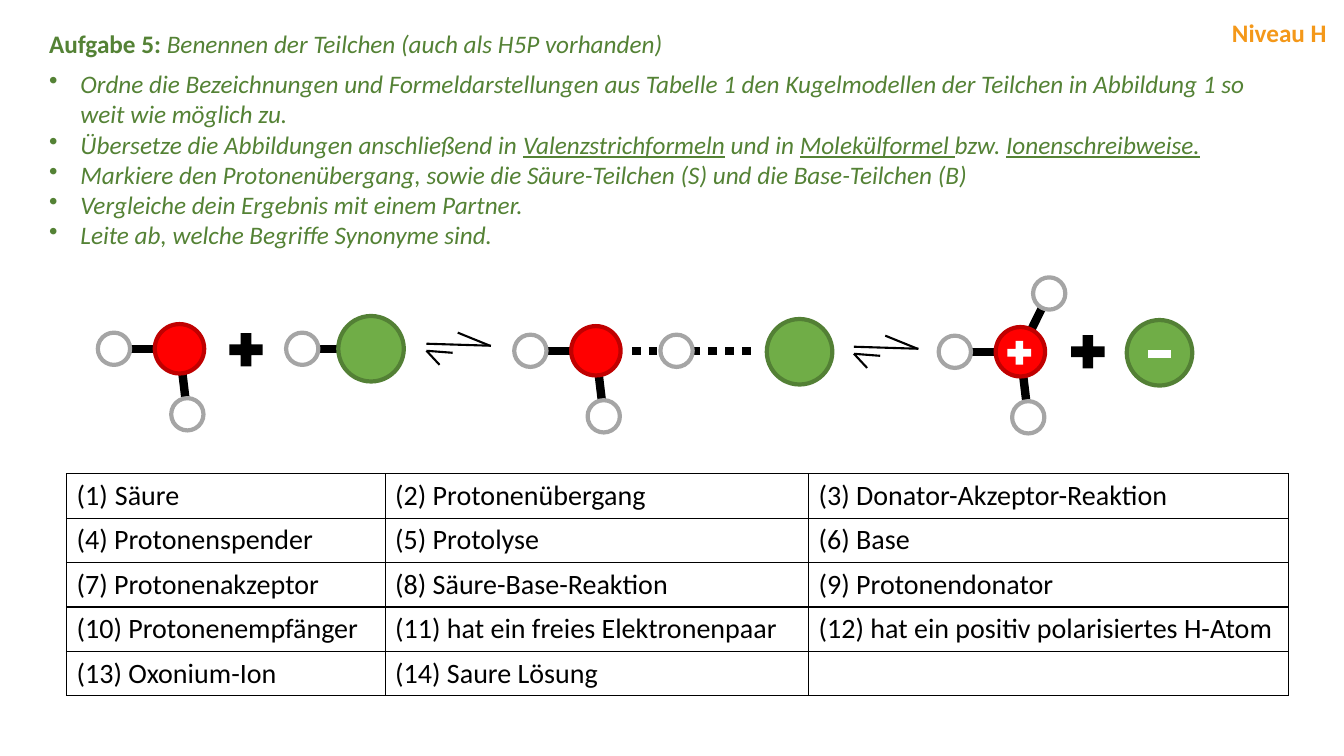
from dataclasses import dataclass
from lxml.etree import SubElement
from pptx import Presentation
from pptx.dml.color import RGBColor
from pptx.enum.dml import MSO_LINE_DASH_STYLE as Dash
from pptx.enum.shapes import MSO_CONNECTOR as Connector, MSO_SHAPE as Shape
from pptx.oxml.ns import qn
from pptx.util import Emu, Inches, Pt


@dataclass(frozen=True)
class Theme:
    font: str = "Calibri"
    body: int = 18
    cell: int = 20
    green: str = "548235"
    orange: str = "F49819"
    black: str = "000000"
    white: str = "FFFFFF"
    bond: float = 6
    outline: float = 3
    arrow: float = 1.5
    border: float = 1


T = Theme()
LEVEL = "Niveau H"
TITLE = [("Aufgabe 5: ", "b"), ("Benennen der Teilchen (auch als H5P vorhanden)", "i")]
TASKS = [
    [("Ordne die Bezeichnungen und Formeldarstellungen aus Tabelle 1 den Kugelmodellen "
      "der Teilchen in Abbildung 1 so weit wie möglich zu.", "i")],
    [("Übersetze die Abbildungen anschließend in ", "i"), ("Valenzstrichformeln", "iu"),
     (" und in ", "i"), ("Molekülformel ", "iu"), ("bzw. ", "i"), ("Ionenschreibweise.", "iu")],
    [("Markiere den Protonenübergang, sowie die Säure-Teilchen (S) und die Base-Teilchen (B)", "i")],
    [("Vergleiche dein Ergebnis mit einem Partner.", "i")],
    [("Leite ab, welche Begriffe Synonyme sind.", "i")],
]
TERMS = [
    ["Säure", "(2) Protonenübergang", "(3) Donator-Akzeptor-Reaktion"],
    ["(4) Protonenspender", "(5) Protolyse", "(6) Base"],
    ["(7) Protonenakzeptor", "(8) Säure-Base-Reaktion", "(9) Protonendonator"],
    ["(10) Protonenempfänger", "(11) hat ein freies Elektronenpaar",
     "(12) hat ein positiv polarisiertes H-Atom"],
    ["(13) Oxonium-Ion", "(14) Saure Lösung", ""],
]
COLUMNS, ROW = [3.16, 4.2, 4.76], 0.44

ATOMS = {"H": (0.32, "FFFFFF", "A5A5A5"),
         "O": (0.49, "FF0000", "C00000"),
         "Cl": (0.65, "70AD47", "538035")}
BOND = 0.65
LEFT, BELOW, ABOVE = (-1, 0), (0.12, 1), (0.44, -0.89)
PARTICLES = [
    ("O", 1.78, 3.46, [LEFT, BELOW]),
    ("Cl", 3.68, 3.46, [(-1.05, 0)]),
    ("O", 5.91, 3.48, [LEFT, BELOW]),
    ("H", 6.71, 3.48, []),
    ("Cl", 7.93, 3.49, []),
    ("O", 10.12, 3.49, [LEFT, BELOW, ABOVE]),
    ("Cl", 11.5, 3.5, []),
]
DOTTED = [(6.27, 6.6), (6.86, 7.5)]
DOTTED_Y = 3.48
SIGNS = [
    (Shape.MATH_PLUS, 2.44, 3.47, 0.45, T.black),
    (Shape.MATH_PLUS, 10.79, 3.49, 0.45, T.black),
    (Shape.MATH_PLUS, 10.11, 3.5, 0.32, T.white),
    (Shape.MATH_MINUS, 11.5, 3.51, 0.32, T.white),
]
EQUILIBRIA = [(4.23, 3.41), (8.47, 3.44)]
STROKES = [(0, 0, 0.64, 0.02), (0.31, -0.11, 0.63, 0.02),
           (0.26, 0.09, 0, 0.07), (0.13, 0.21, 0, 0.07)]

prs = Presentation()
prs.slide_width, prs.slide_height = Inches(13.33), Inches(7.5)
slide = prs.slides.add_slide(prs.slide_layouts[6])


def rgb(code):
    return RGBColor.from_string(code)


def style(p, size, color):
    p.font.name, p.font.size = T.font, Pt(size)
    p.font.color.rgb = rgb(color)


def bullet(p, indent, tag, **attrs):
    pPr = p._p.get_or_add_pPr()
    pPr.set("marL", str(Inches(indent)))
    pPr.set("indent", str(-Inches(indent)))
    bu = pPr.makeelement(qn(tag), attrs)
    pPr.insert(0, bu)


def text(x, y, w, h, paragraphs, color, bulleted=False):
    tf = slide.shapes.add_textbox(*map(Inches, (x, y, w, h))).text_frame
    tf.word_wrap = True
    for i, runs in enumerate(paragraphs):
        p = tf.add_paragraph() if i else tf.paragraphs[0]
        style(p, T.body, color)
        if bulleted:
            bullet(p, 0.31, "a:buChar", char="•")
        for words, marks in runs:
            r = p.add_run()
            r.text = words
            r.font.bold, r.font.italic = "b" in marks, "i" in marks
            r.font.underline = "u" in marks


def line(x1, y1, x2, y2, width, dash=None):
    c = slide.shapes.add_connector(Connector.STRAIGHT, *map(Inches, (x1, y1, x2, y2)))
    c.line.color.rgb, c.line.width = rgb(T.black), Pt(width)
    if dash:
        c.line.dash_style = dash
    SubElement(c._element.spPr, qn("a:effectLst"))


def centred(kind, x, y, size, fill, outline=None):
    sp = slide.shapes.add_shape(kind, *map(Inches, (x - size / 2, y - size / 2, size, size)))
    sp.shadow.inherit = False
    sp.fill.solid()
    sp.fill.fore_color.rgb = rgb(fill)
    if outline:
        sp.line.color.rgb, sp.line.width = rgb(outline), Pt(T.outline)
    else:
        sp.line.fill.background()


def atom(kind, x, y):
    centred(Shape.OVAL, x, y, *ATOMS[kind])


def particle(kind, x, y, directions):
    hydrogens = [(x + dx * BOND, y + dy * BOND) for dx, dy in directions]
    for hx, hy in hydrogens:
        line(hx, hy, x, y, T.bond)
    for hx, hy in hydrogens:
        atom("H", hx, hy)
    atom(kind, x, y)


def border(cell):
    tcPr = cell._tc.get_or_add_tcPr()
    for side in ("a:lnL", "a:lnR", "a:lnT", "a:lnB"):
        ln = SubElement(tcPr, qn(side), w=str(Pt(T.border)))
        SubElement(SubElement(ln, qn("a:solidFill")), qn("a:srgbClr"), val=T.black)


def term_table(x, y):
    size = sum(COLUMNS), ROW * len(TERMS)
    table = slide.shapes.add_table(len(TERMS), len(COLUMNS), *map(Inches, (x, y, *size))).table
    table.first_row = table.horz_banding = False
    for column, width in zip(table.columns, COLUMNS):
        column.width = Inches(width)
    for row, terms in zip(table.rows, TERMS):
        row.height = Inches(ROW)
        for cell, term in zip(row.cells, terms):
            border(cell)
            cell.fill.solid()
            cell.fill.fore_color.rgb = rgb(T.white)
            cell.text = term
            style(cell.text_frame.paragraphs[0], T.cell, T.black)
    first = table.cell(0, 0).text_frame.paragraphs[0]
    bullet(first, 0.38, "a:buAutoNum", type="arabicParenBoth")


term_table(0.66, 4.7)
for x1, x2 in DOTTED:
    line(x1, DOTTED_Y, x2, DOTTED_Y, T.bond, Dash.ROUND_DOT)
for item in PARTICLES:
    particle(*item)
for sign in SIGNS:
    centred(*sign)
for x, y in EQUILIBRIA:
    for x1, y1, x2, y2 in STROKES:
        line(x + x1, y + y1, x + x2, y + y2, T.arrow)
text(0.39, 0.63, 12.16, 1.92, TASKS, T.green, bulleted=True)
text(0.39, 0.23, 11.8, 0.4, [TITLE], T.green)
text(12.12, 0.12, 1.21, 0.4, [[(LEVEL, "b")]], T.orange)

prs.save("out.pptx")
